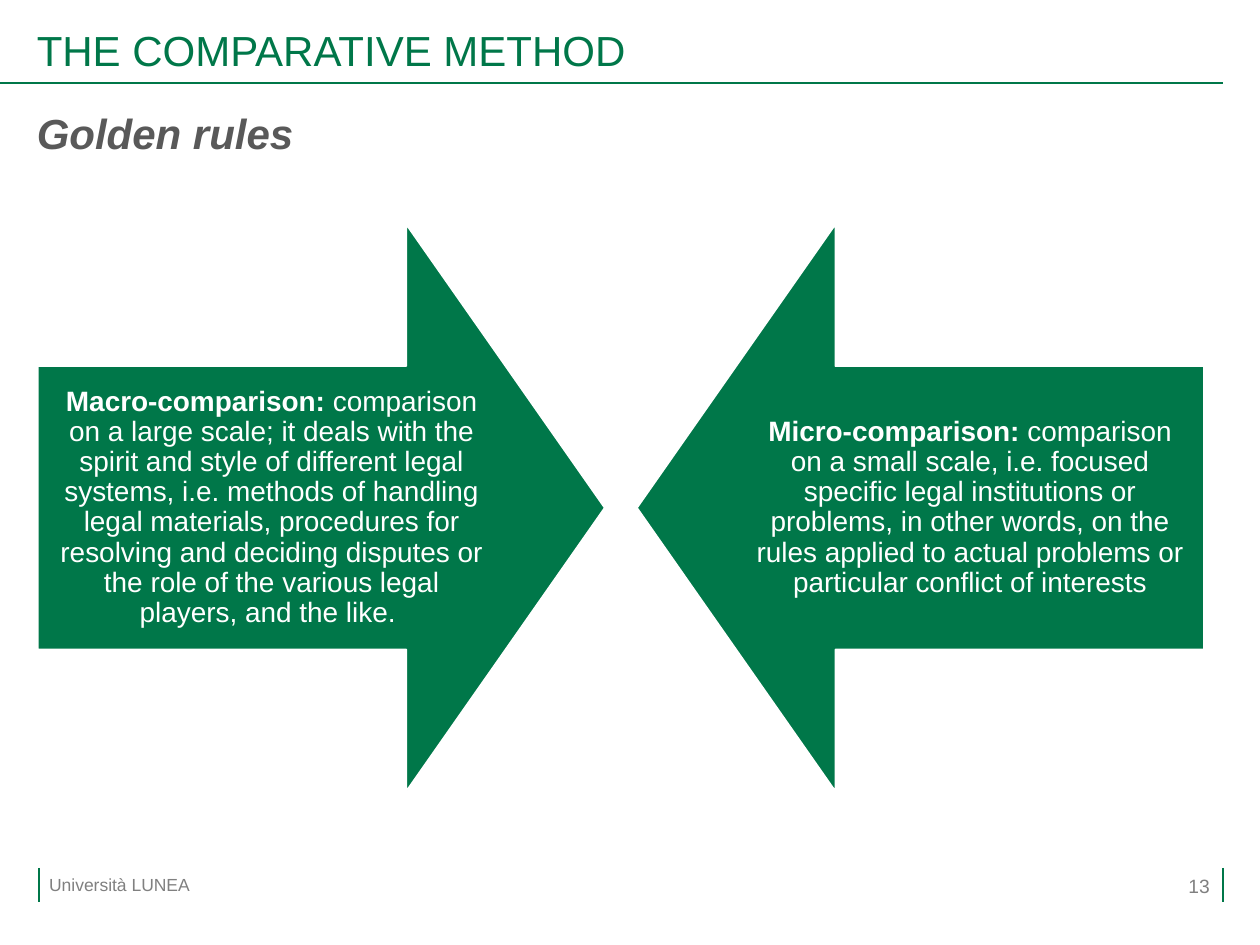
from lxml.etree import SubElement
from pptx import Presentation
from pptx.dml.color import RGBColor
from pptx.enum.shapes import MSO_CONNECTOR, MSO_SHAPE
from pptx.enum.text import MSO_ANCHOR, MSO_AUTO_SIZE, PP_ALIGN
from pptx.oxml.ns import qn
from pptx.util import Pt

THEME = {
    "font": "Arial",
    "green": RGBColor(0x00, 0x77, 0x49),
    "white": RGBColor(0xFF, 0xFF, 0xFF),
    "dark": RGBColor(0x59, 0x59, 0x59),
    "grey": RGBColor(0x80, 0x80, 0x80),
    "head": Pt(24),
    "body": Pt(16),
    "page": Pt(11),
    "foot": Pt(10),
}


def write(shape, runs, size, color, align=PP_ALIGN.LEFT, anchor=MSO_ANCHOR.MIDDLE,
          inset=(7.2, 3.6), space=1.0):
    """Fill a shape with one paragraph; runs are (text, font attributes)."""
    side, top = (Pt(n) for n in inset)
    frame = shape.text_frame
    look = {"word_wrap": True, "auto_size": MSO_AUTO_SIZE.NONE, "vertical_anchor": anchor,
            "margin_left": side, "margin_right": side, "margin_top": top, "margin_bottom": top}
    for name, value in look.items():
        setattr(frame, name, value)
    para = frame.paragraphs[0]
    para.alignment, para.line_spacing = align, space
    for text, extra in runs:
        run = para.add_run()
        run.text = text
        run.font.color.rgb = THEME[color]
        for name, value in {"name": THEME["font"], "size": THEME[size], **extra}.items():
            setattr(run.font, name, value)


deck = Presentation()
deck.slide_width, deck.slide_height = Pt(720), Pt(540)
slide = deck.slides.add_slide(deck.slide_layouts[5])
shapes = slide.shapes

# Heading
title = shapes.title
place = {"left": Pt(21), "top": Pt(13.7), "width": Pt(677.5), "height": Pt(33)}
for name, value in place.items():
    setattr(title, name, value)
write(title, [("THE COMPARATIVE METHOD", {})], "head", "green",
      anchor=MSO_ANCHOR.TOP, inset=(0, 3.6), space=0.9)
sub = shapes.add_textbox(Pt(21), Pt(57.6), Pt(677.5), Pt(43))
write(sub, [("Golden rules", {"bold": True, "italic": True})], "head", "dark",
      anchor=MSO_ANCHOR.TOP, inset=(0, 3.6))

# Rule under the title and the two footer bars
for x1, y1, x2, y2, weight in [
    (0, 47.5, 699, 47.5, 1.5),
    (22.3, 496, 22.3, 515.5, 1),
    (699, 496, 699, 515.5, 1),
]:
    line = shapes.add_connector(MSO_CONNECTOR.STRAIGHT, Pt(x1), Pt(y1), Pt(x2), Pt(y2))
    line.line.color.rgb = THEME["green"]
    line.line.width = Pt(weight)
    SubElement(line._element.spPr, qn("a:effectLst"))

# Facing arrows
for kind, left, term, text in [
    (MSO_SHAPE.RIGHT_ARROW, 21.6, "Macro-comparison:",
     " comparison on a large scale; it deals with the spirit and style of different legal "
     "systems, i.e. methods of handling legal materials, procedures for resolving and "
     "deciding disputes or the role of the various legal players, and the like. "),
    (MSO_SHAPE.LEFT_ARROW, 364, "Micro-comparison:",
     " comparison on a small scale, i.e. focused specific legal institutions or problems, "
     "in other words, on the rules applied to actual problems or particular conflict of "
     "interests"),
]:
    arrow = shapes.add_shape(kind, Pt(left), Pt(128.2), Pt(324), Pt(324))
    arrow.adjustments[0], arrow.adjustments[1] = 0.5, 0.35
    arrow.shadow.inherit = False
    arrow.fill.solid()
    arrow.fill.fore_color.rgb = THEME["green"]
    arrow.line.color.rgb = THEME["white"]
    arrow.line.width = Pt(1)
    write(arrow, [(term, {"bold": True}), (text, {"bold": False})], "body", "white",
          align=PP_ALIGN.CENTER, inset=(8.6, 8.6), space=0.9)

# Footer
foot = shapes.add_textbox(Pt(21), Pt(496), Pt(97.2), Pt(19.4))
write(foot, [("Università LUNEA", {})], "foot", "grey")
page = shapes.add_textbox(Pt(618.5), Pt(491.8), Pt(80), Pt(28.8))
write(page, [("13", {})], "page", "grey", align=PP_ALIGN.RIGHT)

deck.save("out.pptx")
